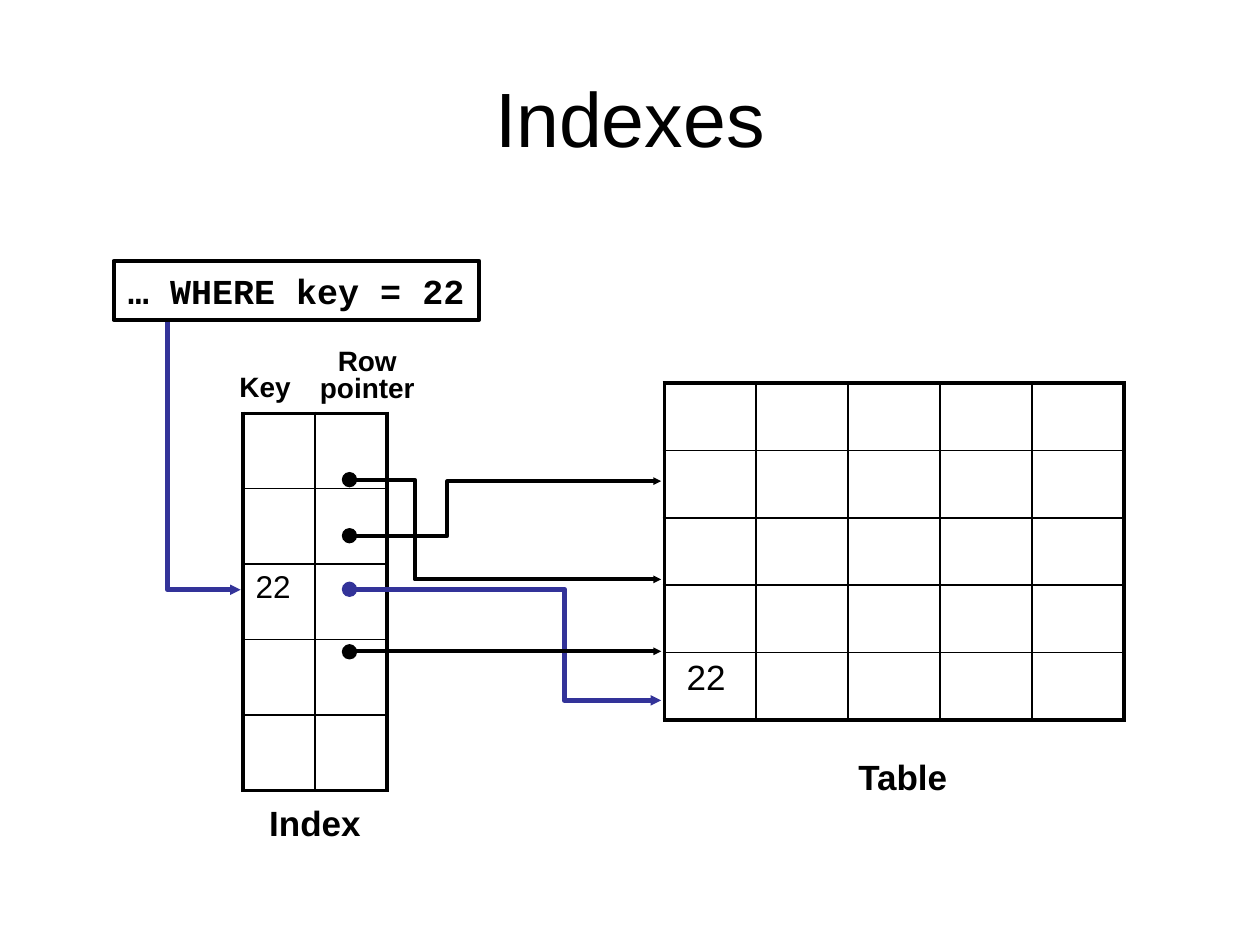
from dataclasses import dataclass

from lxml import etree
from pptx import Presentation
from pptx import util as u
from pptx.dml.color import RGBColor
from pptx.enum import shapes, text
from pptx.oxml import ns

Cm, Pt = u.Cm, u.Pt


@dataclass(frozen=True)
class Theme:
    ink: RGBColor = RGBColor(0, 0, 0)
    lookup: RGBColor = RGBColor(0x33, 0x33, 0x99)
    sans: str = "Arial"
    mono: str = "Courier New"
    title: int = 44
    label: int = 20
    key: int = 18
    header: int = 16
    grid: float = 1
    frame: float = 2.25
    lookup_line: float = 3


@dataclass(frozen=True)
class Box:
    left: float
    top: float
    width: float
    height: float

    @property
    def right(self):
        return self.left + self.width

    @property
    def bottom(self):
        return self.top + self.height

    @property
    def lengths(self):
        return [Cm(n) for n in (self.left, self.top, self.width, self.height)]


THEME = Theme()


def style(para, size, bold=True, name=THEME.sans):
    para.font.size = Pt(size)
    para.font.bold = bold
    para.font.name = name
    para.font.color.rgb = THEME.ink


def add_label(page, box, lines, size, spacing=None, wrap=False):
    frame = page.shapes.add_textbox(*box.lengths).text_frame
    frame.word_wrap = wrap
    para = frame.paragraphs[0]
    para.text = "\v".join(lines)
    para.alignment = text.PP_ALIGN.CENTER
    para.line_spacing = spacing
    style(para, size)


def border_cell(cell, widths):
    props = cell._tc.get_or_add_tcPr()
    for place, (side, width) in enumerate(widths.items()):
        line = etree.Element(ns.qn(f"a:ln{side}"), w=str(Pt(width)))
        fill = etree.SubElement(line, ns.qn("a:solidFill"))
        etree.SubElement(fill, ns.qn("a:srgbClr"), val=str(THEME.ink))
        props.insert(place, line)


def add_grid(page, box, rows, columns):
    grid = page.shapes.add_table(rows, columns, *box.lengths).table
    grid.first_row = grid.horz_banding = False
    for column in grid.columns:
        column.width = Cm(box.width / columns)
    for row in grid.rows:
        row.height = Cm(box.height / rows)
    for r in range(rows):
        for c in range(columns):
            cell = grid.cell(r, c)
            cell.fill.background()
            outer = {"L": c == 0, "R": c == columns - 1, "T": r == 0, "B": r == rows - 1}
            border_cell(cell, {side: THEME.frame if edge else THEME.grid
                               for side, edge in outer.items()})
    return grid


def fill_key(cell, size):
    cell.text = "22"
    style(cell.text_frame.paragraphs[0], size, bold=False)


def style_arrow(arrow, color, width):
    arrow.line.color.rgb = color
    arrow.line.width = Pt(width)
    line = arrow.line._get_or_add_ln()
    etree.SubElement(line, ns.qn("a:tailEnd"), type="triangle", w="sm", len="sm")


def add_elbow(page, points, color, width):
    start, *rest = [(Cm(x), Cm(y)) for x, y in points]
    builder = page.shapes.build_freeform(*start)
    builder.add_line_segments(rest, close=False)
    elbow = builder.convert_to_shape()
    elbow.fill.background()
    elbow.shadow.inherit = False
    style_arrow(elbow, color, width)


def add_straight(page, start, end, color, width):
    arrow = page.shapes.add_connector(
        shapes.MSO_CONNECTOR.STRAIGHT, *[Cm(n) for n in (*start, *end)])
    etree.SubElement(arrow._element.spPr, ns.qn("a:effectLst"))
    style_arrow(arrow, color, width)


def add_dot(page, x, y, color, size=0.31):
    box = Box(x - size / 2, y - size / 2, size, size)
    dot = page.shapes.add_shape(shapes.MSO_SHAPE.OVAL, *box.lengths)
    dot.shadow.inherit = False
    dot.fill.solid()
    dot.fill.fore_color.rgb = color
    dot.line.fill.background()


def place_title(page, box):
    title = page.shapes.title
    title.left, title.top, title.width, title.height = box.lengths
    title.text_frame.text = "Indexes"
    title.text_frame.vertical_anchor = text.MSO_ANCHOR.MIDDLE
    para = title.text_frame.paragraphs[0]
    para.alignment = text.PP_ALIGN.CENTER
    style(para, THEME.title, bold=False)


def place_query(page, box):
    query = page.shapes.add_shape(shapes.MSO_SHAPE.RECTANGLE, *box.lengths)
    query.shadow.inherit = False
    query.fill.background()
    query.line.color.rgb = THEME.ink
    query.line.width = Pt(THEME.frame)
    frame = query.text_frame
    frame.word_wrap = False
    para = frame.paragraphs[0]
    para.text = "… WHERE key = 22"
    para.alignment = text.PP_ALIGN.CENTER
    style(para, THEME.label, name=THEME.mono)


def place_index(page, box):
    grid = add_grid(page, box, 5, 2)
    fill_key(grid.cell(2, 0), THEME.key)
    add_label(page, Box(box.left - 0.66, box.top - 1.01, 2.21, 0.94),
              ["Key"], THEME.header, wrap=True)
    add_label(page, Box(box.left + 1.3, box.top - 1.4, 2.41, 1.35),
              ["Row", "pointer"], THEME.header, spacing=0.8)
    add_label(page, Box(box.left + 0.27, box.bottom + 0.1, 2.36, 1.09),
              ["Index"], THEME.label)


def place_table(page, box):
    grid = add_grid(page, box, 5, 5)
    cell = grid.cell(4, 0)
    cell.margin_left = Cm(0.45)
    fill_key(cell, THEME.label)
    add_label(page, Box(box.left + 3.63, box.bottom + 0.59, 2.36, 1.09),
              ["Table"], THEME.label)


def place_pointers(page, query, index, table):
    ink, lookup = (THEME.ink, THEME.frame), (THEME.lookup, THEME.lookup_line)
    start_x, end_x = index.left + index.width * 0.74, table.left - 0.06
    pointers = [
        (1.34, 0.56, 3.96, ink),
        (2.47, 1.22, 1.98, ink),
        (3.55, 3.58, 6.4, lookup),
        (4.81, None, 5.41, ink),
    ]
    for dot_y, bend, target, look in pointers:
        start_y, end_y = index.top + dot_y, table.top + target
        add_dot(page, start_x, start_y, look[0])
        if bend is None:
            add_straight(page, (start_x, end_y), (end_x, end_y), *look)
        else:
            bend_x = index.right + bend
            add_elbow(page, [(start_x, start_y), (bend_x, start_y),
                             (bend_x, end_y), (end_x, end_y)], *look)
    drop_x, key_y = query.left + 1.09, index.top + 3.56
    add_elbow(page, [(drop_x, query.bottom), (drop_x, key_y),
                     (index.left - 0.05, key_y)], *lookup)


def main():
    deck = Presentation()
    deck.slide_width, deck.slide_height = Cm(25.4), Cm(19.05)
    page = deck.slides.add_slide(deck.slide_layouts[5])
    query = Box(2.29, 5.26, 7.37, 1.19)
    index = Box(4.9, 8.33, 2.9, 7.6)
    table = Box(13.39, 7.72, 9.27, 6.8)
    place_title(page, Box(1.27, 0.76, 22.86, 3.18))
    place_index(page, index)
    place_table(page, table)
    place_pointers(page, query, index, table)
    place_query(page, query)
    deck.save("out.pptx")


if __name__ == "__main__":
    main()
